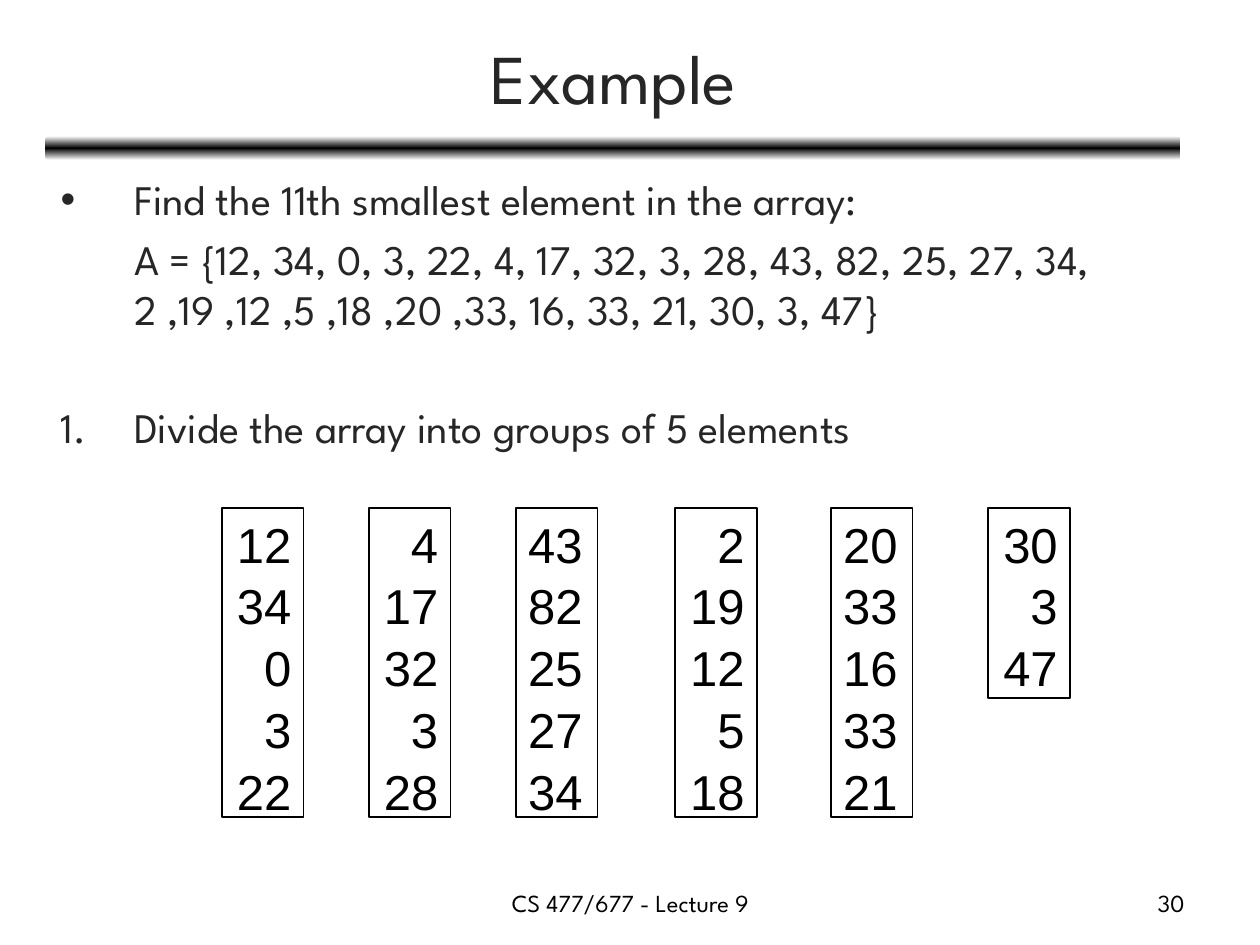
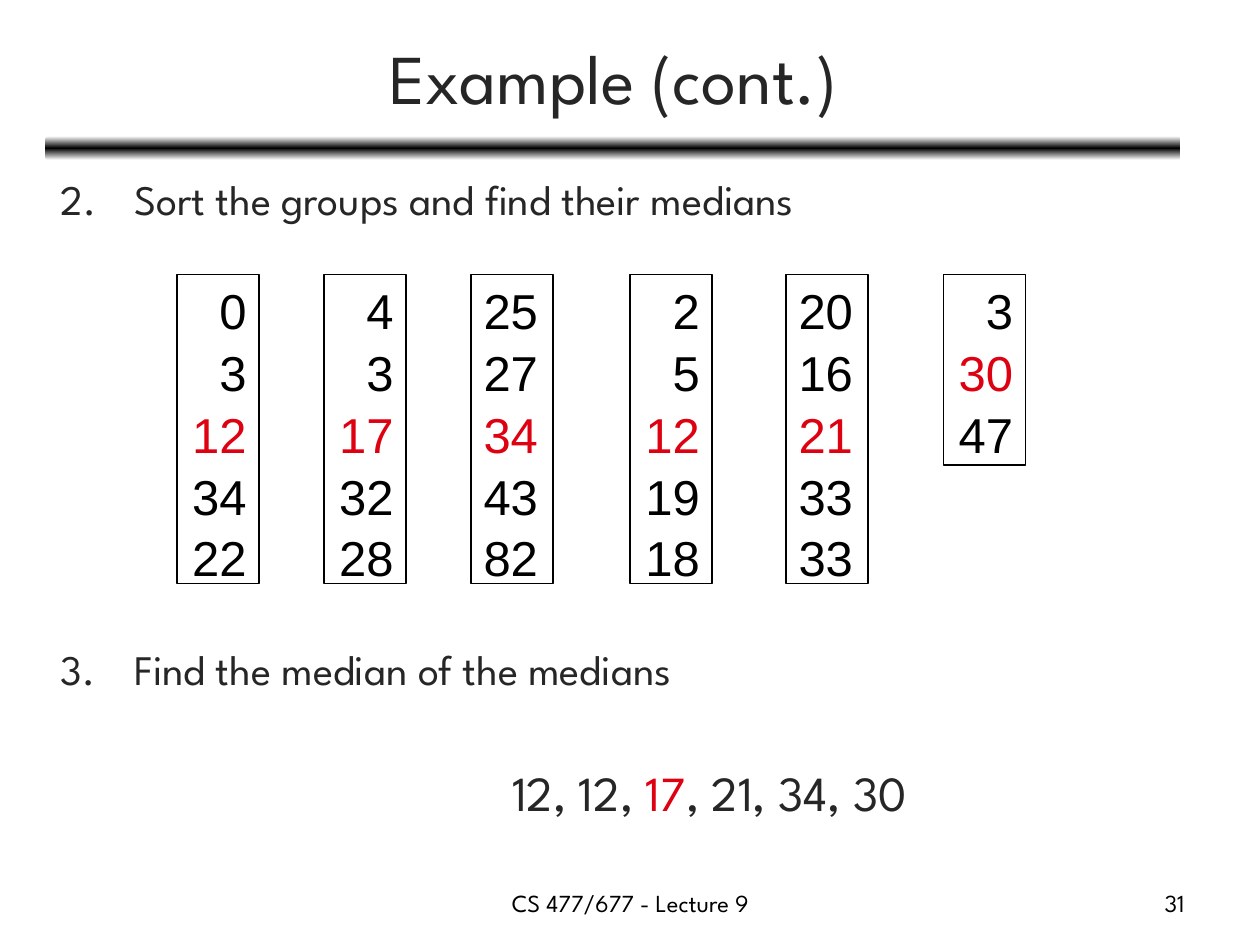
from dataclasses import dataclass
from typing import Any, Optional

from lxml.etree import SubElement
from pptx import Presentation
from pptx.dml.color import RGBColor
from pptx.enum.shapes import MSO_SHAPE
from pptx.enum.text import MSO_ANCHOR, MSO_AUTO_SIZE, PP_ALIGN
from pptx.oxml.ns import qn
from pptx.util import Pt

COLORS = {"ink": "262626", "black": "000000", "white": "FFFFFF", "median": "DD0111"}
HEADING_FONT, DIGIT_FONT = "League Spartan", "Arial"
FORMATS: dict[str, dict[str, Any]] = {
    "title": {"name": HEADING_FONT, "size": Pt(40)},
    "body": {"name": HEADING_FONT, "size": Pt(24)},
    "medians": {"name": HEADING_FONT, "size": Pt(28)},
    "footer": {"name": HEADING_FONT, "size": Pt(14)},
    "digit": {"name": DIGIT_FONT, "size": Pt(28)},
}
INDENT, ITEM_GAP = 42, 5
GROUP_OFFSETS = (0, 84, 168, 259, 348, 438)
GROUP_WIDTH, GROUP_PAD, DIGIT_GAP, DIGIT_HEIGHT = 46.8, 7.2, 1.7, 32.2


@dataclass
class Item:
    runs: list[tuple[str, str]]
    gap: float = ITEM_GAP
    bullet: Optional[str] = None
    number: Optional[int] = None
    indent: float = INDENT
    style: str = "body"


@dataclass
class Group:
    values: list[int]
    align: PP_ALIGN = PP_ALIGN.RIGHT


@dataclass
class Page:
    title: str
    number: int
    items: list[Item]
    groups: list[Group]
    left: float
    top: float
    mark_medians: bool = False


def add_run(p: Any, text: str, style: str, color: str) -> None:
    """Append a formatted run to a paragraph."""
    r = p.add_run()
    r.text = text
    for key, value in FORMATS[style].items():
        setattr(r.font, key, value)
    r.font.color.rgb = RGBColor.from_string(COLORS[color])


def place(sp: Any, left: float, top: float, width: float, height: float) -> None:
    """Move and size a shape, in points."""
    box = {"left": left, "top": top, "width": width, "height": height}
    for key, value in box.items():
        setattr(sp, key, Pt(value))


def add_band(s: Any) -> None:
    """Draw the gradient band under the title."""
    sp = s.shapes.add_shape(MSO_SHAPE.ROUNDED_RECTANGLE, Pt(26), Pt(77.8), Pt(648.6), Pt(13.7))
    sp.shadow.inherit = False
    sp.line.fill.background()
    sp.fill.gradient()
    sp.fill.gradient_angle = 90
    stops = next(sp._element.iter(qn("a:gsLst")))
    for stop in list(stops):
        stops.remove(stop)
    for percent, color in ((0, "white"), (50, "black"), (100, "white")):
        stop = SubElement(stops, qn("a:gs"), pos=str(percent * 1000))
        SubElement(stop, qn("a:srgbClr"), val=COLORS[color])


def add_footer(s: Any, text: str, left: float, width: float, align: PP_ALIGN) -> None:
    """Write one footer text."""
    tf = s.shapes.add_textbox(Pt(left), Pt(504), Pt(width), Pt(25)).text_frame
    tf.word_wrap = True
    p = tf.paragraphs[0]
    p.alignment = align
    add_run(p, text, "footer", "black")


def set_title(s: Any, text: str) -> None:
    """Fill and place the title placeholder."""
    sp = s.shapes.title
    place(sp, 26.6, 8, 648, 71)
    tf = sp.text_frame
    tf.auto_size, tf.vertical_anchor = MSO_AUTO_SIZE.NONE, MSO_ANCHOR.MIDDLE
    p = tf.paragraphs[0]
    p.alignment = PP_ALIGN.CENTER
    add_run(p, text, "title", "ink")


def set_bullet(p: Any, item: Item) -> None:
    """Set the indents and the bullet or number of a list paragraph."""
    pPr = p._p.get_or_add_pPr()
    marked = item.bullet or item.number
    pPr.set("marL", str(Pt(item.indent)))
    pPr.set("indent", str(-Pt(item.indent) if marked else 0))
    if item.number:
        SubElement(pPr, qn("a:buFont"), typeface=HEADING_FONT)
        SubElement(pPr, qn("a:buAutoNum"), type="arabicPeriod", startAt=str(item.number))
    elif item.bullet:
        SubElement(pPr, qn("a:buFont"), typeface=DIGIT_FONT)
        SubElement(pPr, qn("a:buChar"), char=item.bullet)
    else:
        SubElement(pPr, qn("a:buNone"))


def set_body(s: Any, items: list[Item]) -> None:
    """Fill and place the body placeholder."""
    sp = s.placeholders[1]
    place(sp, 27.4, 95.8, 648, 399.6)
    tf = sp.text_frame
    tf.auto_size = MSO_AUTO_SIZE.NONE
    for i, item in enumerate(items):
        p = tf.add_paragraph() if i else tf.paragraphs[0]
        p.space_before = Pt(item.gap)
        set_bullet(p, item)
        for j, (text, color) in enumerate(item.runs):
            if text == "\v":
                p.add_line_break()
            else:
                add_run(p, text, item.style, color)


def add_group(s: Any, group: Group, left: float, top: float, mark_median: bool) -> None:
    """Draw one boxed column of numbers."""
    count = len(group.values)
    height = GROUP_PAD + count * (DIGIT_HEIGHT + DIGIT_GAP)
    sp = s.shapes.add_shape(MSO_SHAPE.RECTANGLE, Pt(left), Pt(top), Pt(GROUP_WIDTH), Pt(height))
    sp.shadow.inherit = False
    sp.fill.background()
    sp.line.color.rgb = RGBColor.from_string(COLORS["black"])
    sp.line.width = Pt(1)
    tf = sp.text_frame
    tf.word_wrap, tf.vertical_anchor = False, MSO_ANCHOR.TOP
    tf.auto_size = MSO_AUTO_SIZE.SHAPE_TO_FIT_TEXT
    for i, value in enumerate(group.values):
        p = tf.add_paragraph() if i else tf.paragraphs[0]
        p.alignment, p.space_before = group.align, Pt(DIGIT_GAP)
        is_median = mark_median and i == count // 2
        add_run(p, str(value), "digit", "median" if is_median else "black")


def add_page(prs: Any, page: Page) -> None:
    """Build one slide."""
    s = prs.slides.add_slide(prs.slide_layouts[1])
    add_band(s)
    set_title(s, page.title)
    set_body(s, page.items)
    for offset, group in zip(GROUP_OFFSETS, page.groups):
        add_group(s, group, page.left + offset, page.top, page.mark_medians)
    add_footer(s, "CS 477/677 - Lecture 9", 246.2, 228.2, PP_ALIGN.CENTER)
    add_footer(s, str(page.number), 516.2, 167.8, PP_ALIGN.RIGHT)


PAGES = [
    Page(
        "Example", 30,
        [
            Item([("Find the 11th smallest element in the array:", "ink")], bullet="•"),
            Item([
                ("A = {12, 34, 0, 3, 22, 4, 17, 32, 3, 28, 43, 82, 25, 27, 34,", "ink"),
                ("\v", "ink"),
                ("2 ,19 ,12 ,5 ,18 ,20 ,33, 16, 33, 21, 30, 3, 47}", "ink"),
            ]),
            Item([("Divide the array into groups of 5 elements", "ink")], gap=38.8, number=1),
        ],
        [
            Group([12, 34, 0, 3, 22]),
            Group([4, 17, 32, 3, 28]),
            Group([43, 82, 25, 27, 34], PP_ALIGN.LEFT),
            Group([2, 19, 12, 5, 18]),
            Group([20, 33, 16, 33, 21], PP_ALIGN.LEFT),
            Group([30, 3, 47]),
        ],
        left=126.7, top=290.2,
    ),
    Page(
        "Example (cont.)", 31,
        [
            Item([("Sort the groups and find their medians", "ink")], number=2),
            Item([("Find the median of the medians", "ink")], gap=239.4, number=3),
            Item(
                [("12, 12, ", "ink"), ("17", "median"), (", 21, 34, 30", "ink")],
                gap=39.4, indent=258, style="medians",
            ),
        ],
        [
            Group([0, 3, 12, 34, 22]),
            Group([4, 3, 17, 32, 28]),
            Group([25, 27, 34, 43, 82], PP_ALIGN.LEFT),
            Group([2, 5, 12, 19, 18]),
            Group([20, 16, 21, 33, 33], PP_ALIGN.LEFT),
            Group([3, 30, 47]),
        ],
        left=101.2, top=156.8, mark_medians=True,
    ),
]


def main() -> None:
    """Build and save the presentation."""
    prs = Presentation()
    prs.slide_width, prs.slide_height = Pt(720), Pt(540)
    for page in PAGES:
        add_page(prs, page)
    prs.save("out.pptx")


if __name__ == "__main__":
    main()
